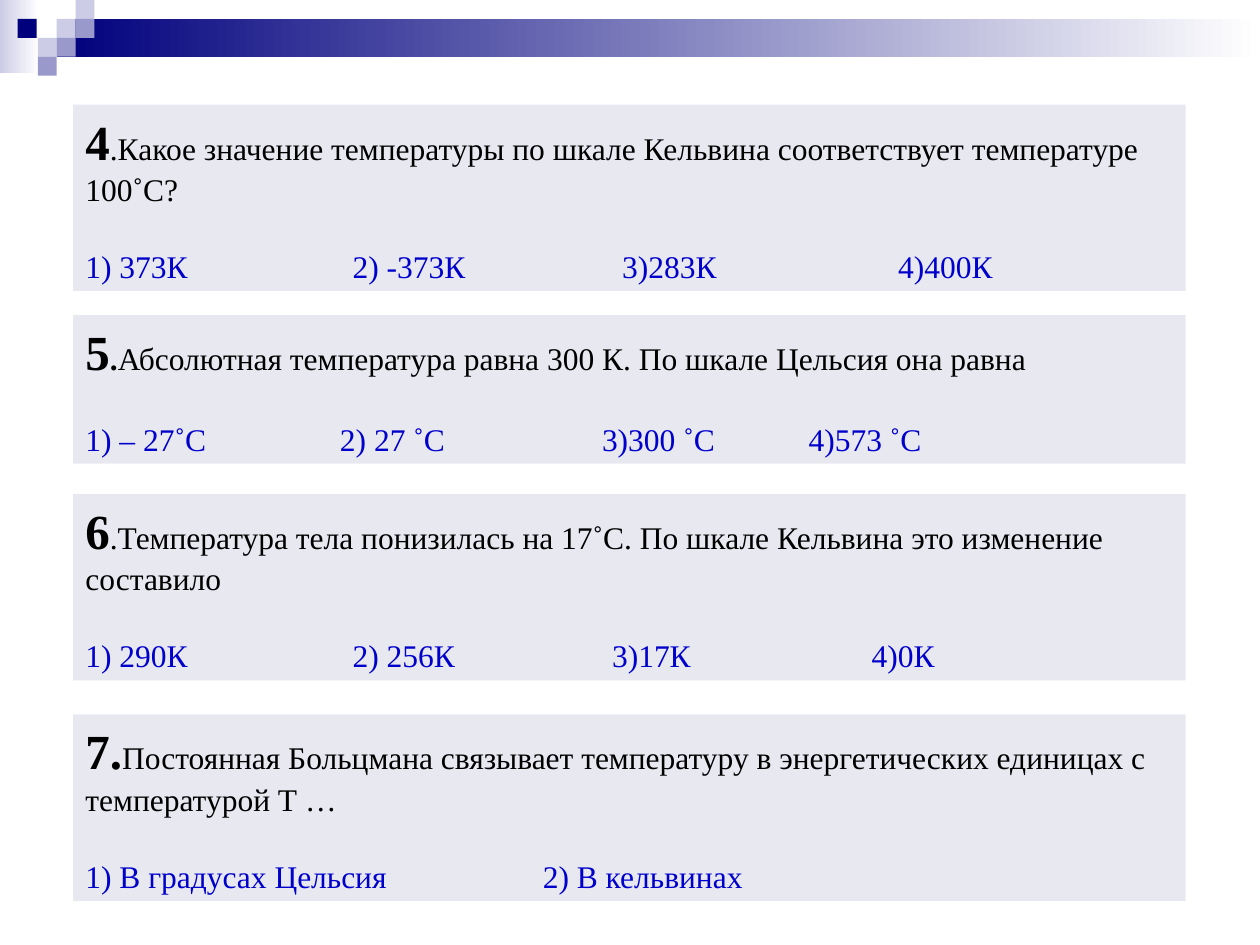
from lxml import etree
from pptx import Presentation
from pptx.dml.color import RGBColor
from pptx.enum.shapes import MSO_SHAPE
from pptx.enum.text import MSO_ANCHOR, PP_ALIGN
from pptx.oxml.ns import qn
from pptx.util import Inches, Pt

WHITE = RGBColor(0xFF, 0xFF, 0xFF)
BLACK = RGBColor(0x00, 0x00, 0x00)
NAVY = RGBColor(0x00, 0x00, 0x7D)
LAVENDER = RGBColor(0xCC, 0xCC, 0xE6)
VIOLET = RGBColor(0x99, 0x99, 0xCC)
PANEL = RGBColor(0xE8, 0xE8, 0xF1)
ANSWER_BLUE = RGBColor(0x00, 0x00, 0xCC)

prs = Presentation()
prs.slide_width, prs.slide_height = Inches(10), Inches(7.5)
slide = prs.slides.add_slide(prs.slide_layouts[6])


def add_rect(left, top, width, height, color, fade_to=None):
    """Add a borderless rectangle, fading left to right when fade_to is given."""
    rect = slide.shapes.add_shape(MSO_SHAPE.RECTANGLE, Inches(left), Inches(top),
                                  Inches(width), Inches(height))
    rect.shadow.inherit = False
    rect.line.fill.background()
    if fade_to is None:
        rect.fill.solid()
        rect.fill.fore_color.rgb = color
    else:
        rect.fill.gradient()
        rect.fill.gradient_angle = 0
        for stop, stop_color, position in zip(rect.fill.gradient_stops, (color, fade_to), (0, 1)):
            stop.color.rgb = stop_color
            stop.position = position
    return rect


def add_text(paragraph, text, size=18, color=BLACK, bold=False):
    run = paragraph.add_run()
    run.text = text
    run.font.name = "Times New Roman"
    run.font.size = Pt(size)
    run.font.bold = bold
    run.font.color.rgb = color


# Header decoration
add_rect(0, 0, 0.31, 0.58, LAVENDER, fade_to=WHITE)
add_rect(0.45, 0.15, 9.55, 0.3, NAVY, fade_to=WHITE)
TILE = 0.15
for left, top, color in [
    (0.45, 0.15, LAVENDER), (0.6, 0, LAVENDER), (0.6, 0.15, VIOLET), (0.3, 0.3, LAVENDER),
    (0.14, 0.15, NAVY), (0.45, 0.3, VIOLET), (0.3, 0.45, VIOLET),
]:
    add_rect(left, top, TILE, TILE, color)

# Questions: top, height, number, bold dot, plain wording, answers, tab stops
questions = [
    (0.83, 1.48, "4", "",
     ".Какое значение температуры по шкале Кельвина соответствует температуре 100˚С?",
     ["1) 373К", "2) -373К", "3)283К", "4)400К"], [2.12, 4.26, 6.45]),
    (2.5, 1.18, "5", ".",
     "Абсолютная температура равна 300 К. По шкале Цельсия она равна",
     ["1) – 27˚С", "2) 27 ˚С", "3)300 ˚С", "4)573 ˚С"], [2.02, 4.1, 5.74]),
    (3.92, 1.48, "6", "",
     ".Температура тела понизилась на 17˚С. По шкале Кельвина это изменение составило",
     ["1) 290К", "2) 256К", "3)17К", "4)0К"], [2.12, 4.18, 6.24]),
    (5.67, 1.48, "7.", "",
     "Постоянная Больцмана связывает температуру в энергетических единицах с температурой Т …",
     ["1) В градусах Цельсия", "2) В кельвинах"], [3.63]),
]
for top, height, number, dot, wording, answers, tab_stops in questions:
    frame = add_rect(0.58, top, 8.83, height, PANEL).text_frame
    frame.word_wrap = True
    frame.vertical_anchor = MSO_ANCHOR.BOTTOM

    question = frame.paragraphs[0]
    question.alignment = PP_ALIGN.LEFT
    add_text(question, number, size=28, bold=True)
    if dot:
        add_text(question, dot, bold=True)
    add_text(question, wording)

    choices = frame.add_paragraph()
    choices.alignment = PP_ALIGN.LEFT
    choices.space_before = Pt(22.5)
    tab_list = etree.SubElement(choices._p.get_or_add_pPr(), qn("a:tabLst"))
    for position in tab_stops:
        etree.SubElement(tab_list, qn("a:tab"), pos=str(Inches(position)), algn="l")
    add_text(choices, "\t".join(answers), color=ANSWER_BLUE)

prs.save("out.pptx")
